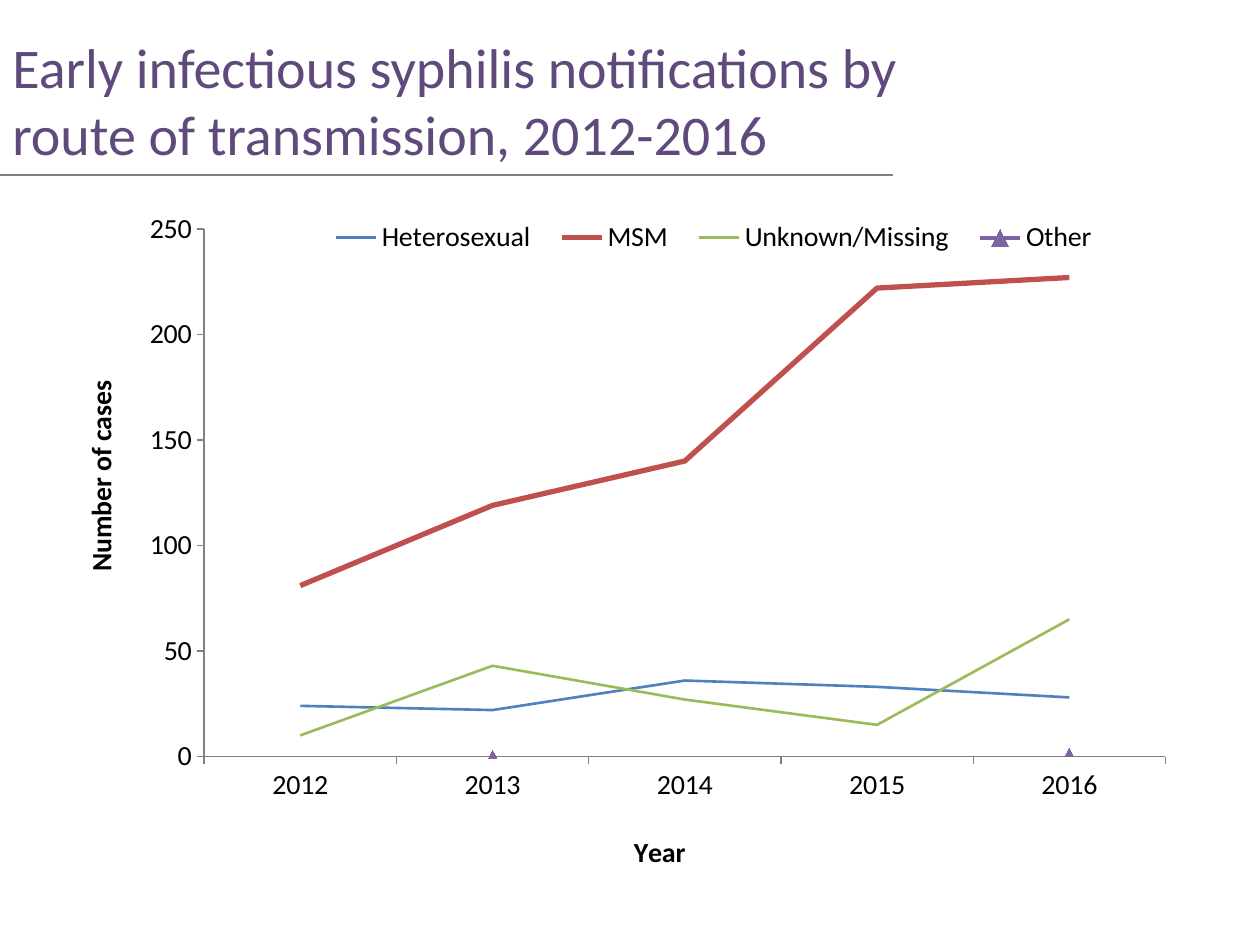
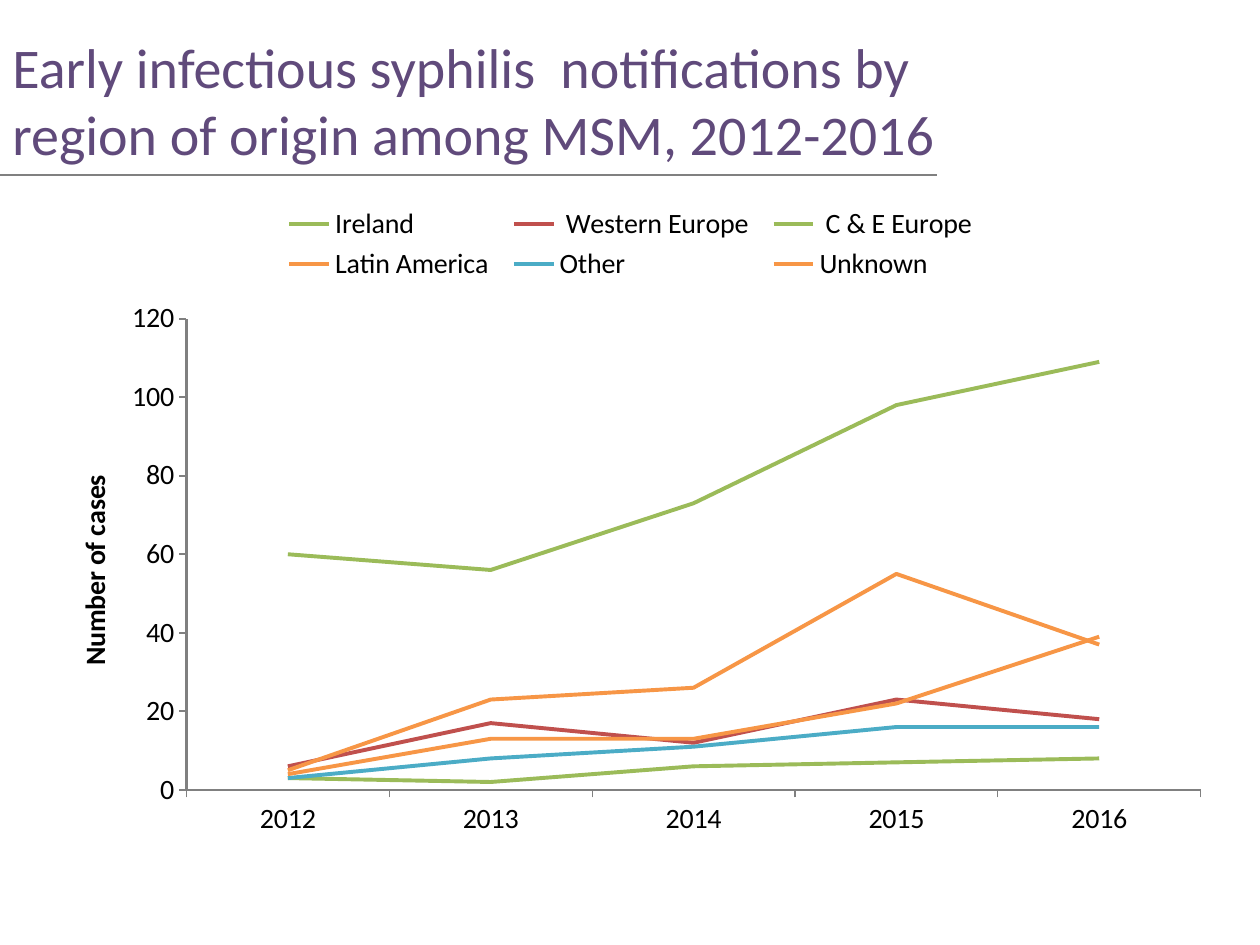
import pptx
import pptx.chart.data
import pptx.dml.color
import pptx.enum.chart
import pptx.enum.shapes
import pptx.enum.text
import pptx.oxml.ns
import pptx.oxml.xmlchemy
import pptx.util

Inches = pptx.util.Inches
Pt = pptx.util.Pt
RGBColor = pptx.dml.color.RGBColor
qn = pptx.oxml.ns.qn
OxmlElement = pptx.oxml.xmlchemy.OxmlElement

FONT = "Calibri"
BLACK = RGBColor(0x00, 0x00, 0x00)
GREY = RGBColor(0x80, 0x80, 0x80)
TITLE_PURPLE = RGBColor(0x60, 0x4A, 0x7B)
BLUE = RGBColor(0x4F, 0x81, 0xBD)
RED = RGBColor(0xC0, 0x50, 0x4D)
GREEN = RGBColor(0x9B, 0xBB, 0x59)
PURPLE = RGBColor(0x80, 0x64, 0xA2)
TEAL = RGBColor(0x4B, 0xAC, 0xC6)
ORANGE = RGBColor(0xF7, 0x96, 0x46)

YEARS = ["2012", "2013", "2014", "2015", "2016"]
ROUTES = [
    ("Heterosexual", [24, 22, 36, 33, 28], BLUE, 1.5),
    ("MSM", [81, 119, 140, 222, 227], RED, 3),
    ("Unknown/Missing", [10, 43, 27, 15, 65], GREEN, 1.5),
    ("Other", [None, 1, None, None, 2], PURPLE, 2.25),
]
REGIONS = [
    ("Ireland", [60, 56, 73, 98, 109], GREEN, 2.25),
    (" Western Europe", [6, 17, 12, 23, 18], RED, 2.25),
    (" C & E Europe", [3, 2, 6, 7, 8], GREEN, 2.25),
    ("Latin America", [5, 23, 26, 55, 37], ORANGE, 2.25),
    ("Other", [3, 8, 11, 16, 16], TEAL, 2.25),
    ("Unknown", [4, 13, 13, 22, 39], ORANGE, 2.25),
]


def add_heading(slide, text, rule_length):
    box = slide.shapes.add_textbox(0, Inches(0.24), Inches(10), Inches(1.1))
    frame = box.text_frame
    frame.word_wrap = True
    frame.vertical_anchor = pptx.enum.text.MSO_ANCHOR.MIDDLE
    paragraph = frame.paragraphs[0]
    paragraph.text = text
    for run in paragraph.runs:
        run.font.name = FONT
        run.font.size = Pt(32)
        run.font.color.rgb = TITLE_PURPLE
    rule = slide.shapes.add_connector(
        pptx.enum.shapes.MSO_CONNECTOR.STRAIGHT,
        0, Inches(1.39), Inches(rule_length), Inches(1.39))
    rule.line.color.rgb = GREY
    rule.line.width = Pt(0.75)
    rule.element.find(qn("p:spPr")).append(OxmlElement("a:effectLst"))


def set_layout(parent, chart_box, place, inner=False):
    layout = parent.find(qn("c:layout"))
    if layout is None:
        layout = OxmlElement("c:layout")
        overlay = parent.find(qn("c:overlay"))
        parent.insert(0 if overlay is None else parent.index(overlay), layout)
    manual = OxmlElement("c:manualLayout")
    layout.append(manual)
    settings = [("layoutTarget", "inner")] if inner else []
    settings += [("xMode", "edge"), ("yMode", "edge")]
    chart_size = chart_box[2:] * 2
    settings += [(name, length / total)
                 for name, length, total in zip("xywh", place, chart_size)]
    for name, value in settings:
        setting = OxmlElement("c:" + name)
        setting.set("val", str(value))
        manual.append(setting)


def format_axis(axis, line_width):
    axis.has_major_gridlines = False
    axis.major_tick_mark = pptx.enum.chart.XL_TICK_MARK.OUTSIDE
    axis.minor_tick_mark = pptx.enum.chart.XL_TICK_MARK.NONE
    axis.format.line.color.rgb = GREY
    axis.format.line.width = Pt(line_width)


def add_axis_title(axis, text, chart_box, place):
    paragraph = axis.axis_title.text_frame.paragraphs[0]
    paragraph.text = text
    font = paragraph.runs[0].font
    font.name = FONT
    font.size = Pt(16)
    font.bold = True
    font.color.rgb = BLACK
    set_layout(axis.axis_title.element, chart_box, place)


def add_line_chart(slide, box, series_rows, maximum, step, plot_box, legend_box,
                   cases_title_at, axis_width):
    data = pptx.chart.data.CategoryChartData()
    data.categories = YEARS
    for name, values, color, width in series_rows:
        data.add_series(name, values)
    chart = slide.shapes.add_chart(
        pptx.enum.chart.XL_CHART_TYPE.LINE, *map(Inches, box), data).chart
    chart.has_title = False
    chart.font.name = FONT
    chart.font.size = Pt(16)
    chart.font.color.rgb = BLACK
    chart.plots[0].vary_by_categories = False
    for series, (name, values, color, width) in zip(chart.series, series_rows):
        series.smooth = False
        series.format.line.color.rgb = color
        series.format.line.width = Pt(width)
        series.marker.style = pptx.enum.chart.XL_MARKER_STYLE.NONE

    format_axis(chart.category_axis, 0.75)
    format_axis(chart.value_axis, axis_width)
    chart.value_axis.minimum_scale = 0
    chart.value_axis.maximum_scale = maximum
    chart.value_axis.major_unit = step
    add_axis_title(chart.value_axis, "Number of cases", box, cases_title_at)

    chart.has_legend = True
    chart.legend.position = pptx.enum.chart.XL_LEGEND_POSITION.TOP
    chart.legend.include_in_layout = False
    set_layout(chart.element.find(".//" + qn("c:legend")), box, legend_box)
    set_layout(chart.element.find(".//" + qn("c:plotArea")), box, plot_box, inner=True)
    return chart


def add_route_slide(presentation):
    slide = presentation.slides.add_slide(presentation.slide_layouts[6])
    add_heading(slide, "Early infectious syphilis notifications by\n"
                "route of transmission, 2012-2016", 7.09)
    box = (0.43, 1.62, 8.94, 5.35)
    chart = add_line_chart(
        slide, box, ROUTES, 250, 50,
        plot_box=(1.19, 0.2, 7.63, 4.23), legend_box=(2.06, 0.11, 6.35, 0.32),
        cases_title_at=(0.18, 1.39), axis_width=0.75)
    add_axis_title(chart.category_axis, "Year", box, (4.56, 5))
    marker = chart.series[-1].marker
    marker.style = pptx.enum.chart.XL_MARKER_STYLE.TRIANGLE
    marker.size = 5
    marker.format.fill.solid()
    marker.format.fill.fore_color.rgb = PURPLE
    marker.format.line.color.rgb = PURPLE


def add_region_slide(presentation):
    slide = presentation.slides.add_slide(presentation.slide_layouts[6])
    add_heading(slide, "Early infectious syphilis  notifications by\n"
                "region of origin among MSM, 2012-2016", 7.44)
    add_line_chart(
        slide, (0.28, 1.55, 9.45, 5.2), REGIONS, 120, 20,
        plot_box=(1.2, 0.98, 8.05, 3.74), legend_box=(1.89, 0.05, 5.67, 0.68),
        cases_title_at=(0.28, 2.18), axis_width=1.25)


def main():
    presentation = pptx.Presentation()
    presentation.slide_width = Inches(10)
    presentation.slide_height = Inches(7.5)
    add_route_slide(presentation)
    add_region_slide(presentation)
    presentation.save("out.pptx")


if __name__ == "__main__":
    main()
